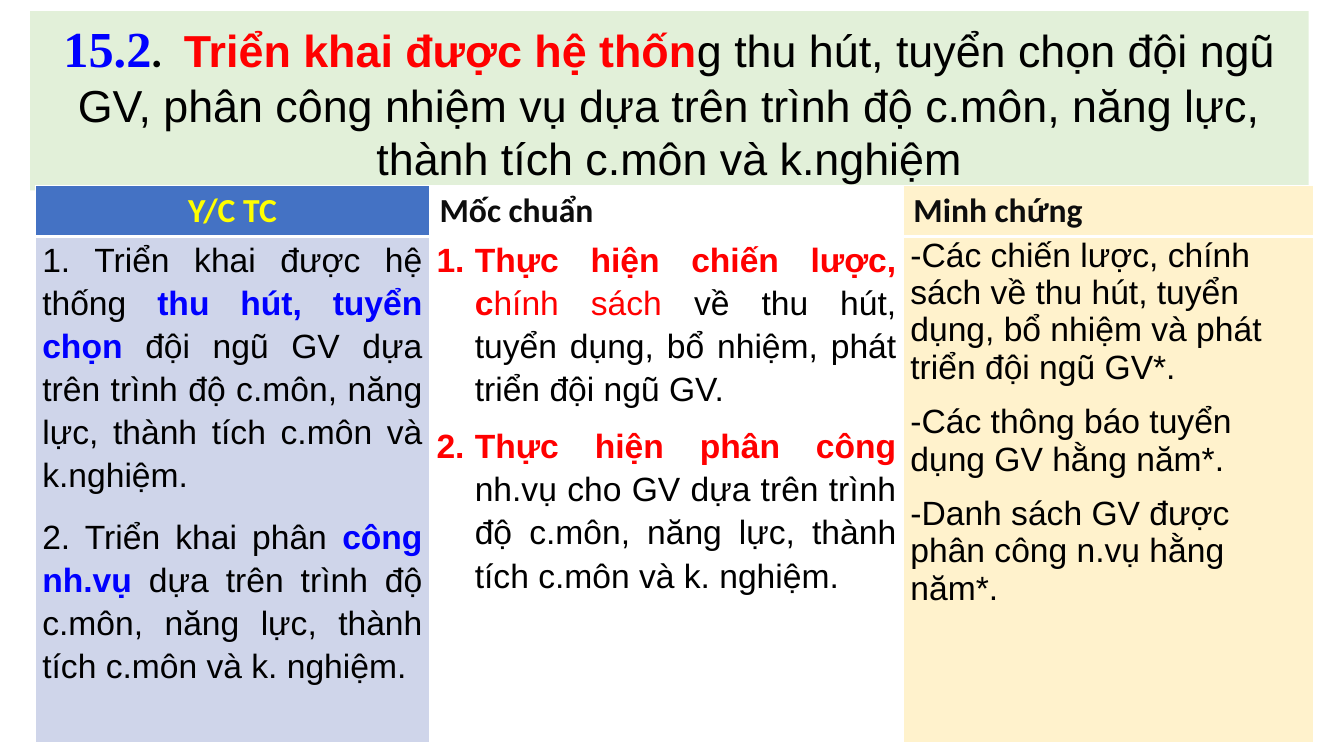
import pptx
import pptx.util
import pptx.dml.color
import pptx.enum.shapes
import pptx.enum.text
import pptx.oxml
import pptx.oxml.ns
from lxml import etree

Inch, Pt = pptx.util.Inches, pptx.util.Pt
RGB = pptx.dml.color.RGBColor
ALIGN = pptx.enum.text.PP_ALIGN

BLACK, INK, WHITE = RGB(0, 0, 0), RGB(0x0D, 0x0D, 0x0D), RGB(255, 255, 255)
RED, BLUE, YELLOW = RGB(255, 0, 0), RGB(0, 0, 255), RGB(255, 255, 0)
MINT, CREAM = RGB(0xE2, 0xF0, 0xD9), RGB(0xFF, 0xF2, 0xCC)
NAVY, PALE = RGB(0x44, 0x72, 0xC4), RGB(0xCF, 0xD5, 0xEA)

# Content: title runs are (text, font, size, colour, bold, italic)
TITLE = [
    ("15.2", "Times New Roman", 36, BLUE, True, False),
    (".  ", "Calibri", 32, BLACK, True, True),
    ("Triển khai được hệ thốn", "Arial", 32, RED, True, False),
    ("g thu hút, tuyển chọn đội ngũ GV, phân công nhiệm vụ dựa trên "
     "trình độ c.môn, năng lực, thành tích c.môn và k.nghiệm",
     "Arial", 32, BLACK, False, False),
]

# Header cells: text, colour, fill, alignment
HEADS = [
    ("Y/C TC", YELLOW, NAVY, ALIGN.CENTER),
    ("Mốc chuẩn", INK, WHITE, ALIGN.LEFT),
    ("Minh chứng", INK, CREAM, ALIGN.LEFT),
]

# Body cells: paragraphs of (text, colour, bold) runs
NEEDS = [
    [("1. Triển khai được hệ thống ", BLACK, False),
     ("thu hút, tuyển chọn ", BLUE, True),
     ("đội ngũ GV dựa trên trình độ c.môn, năng lực, thành tích c.môn "
      "và k.nghiệm.", BLACK, False)],
    [("2. Triển khai phân ", BLACK, False),
     ("công nh.vụ ", BLUE, True),
     ("dựa trên trình độ c.môn, năng lực, thành tích c.môn "
      "và k. nghiệm.", BLACK, False)],
]
MARKS = [
    [("Thực hiện chiến lược, c", RED, True),
     ("hính sách", RED, False),
     (" về thu hút, tuyển dụng, bổ nhiệm, phát triển đội ngũ GV.",
      BLACK, False)],
    [("Thực hiện phân công ", RED, True),
     ("nh.vụ cho GV dựa trên trình độ c.môn, năng lực, thành tích c.môn "
      "và k. nghiệm.", BLACK, False)],
]
PROOFS = [
    [("-Các chiến lược, chính sách về thu hút, tuyển dụng, bổ nhiệm và "
      "phát triển đội ngũ GV*.", BLACK, False)],
    [("-Các thông báo tuyển dụng GV hằng năm*.", BLACK, False)],
    [("-Danh sách GV được phân công n.vụ hằng năm*.", BLACK, False)],
]

# Paragraphs, fill, alignment, line spacing, space before, space after, numbered
BODY = [
    (NEEDS, PALE, ALIGN.JUSTIFY, 1.15, 3, 10, False),
    (MARKS, WHITE, ALIGN.JUSTIFY, 1.15, 0, 10, True),
    (PROOFS, CREAM, ALIGN.LEFT, 1.0, 6, 6, False),
]
COLS, ROWS = [3.91, 4.7, 4.07], [0.48, 5.02]
WIDE = sum(COLS)


def add_run(para, text, face, size, color, bold, slant=False):
    run = para.add_run()
    run.text = text
    font = run.font
    font.name, font.size = face, Pt(size)
    font.bold, font.italic = bold, slant
    font.color.rgb = color


def add_tag(parent, name, **attrs):
    return etree.SubElement(parent, pptx.oxml.ns.qn(name), attrs)


def dress(cell, fill, base):
    """White borders first, then the fill, as the schema orders them."""
    props = cell._tc.get_or_add_tcPr()
    for side, width in (("L", 1), ("R", 1), ("T", 1), ("B", base)):
        line = add_tag(props, "a:ln" + side, w=str(Pt(width)))
        paint = add_tag(line, "a:solidFill")
        add_tag(paint, "a:srgbClr", val=str(WHITE))
    cell.fill.solid()
    cell.fill.fore_color.rgb = fill


def number(para):
    props = para._p.get_or_add_pPr()
    props.set("marL", str(Inch(0.38)))
    props.set("indent", str(-Inch(0.38)))
    add_tag(props, "a:buFont", typeface="+mj-lt")
    add_tag(props, "a:buAutoNum", type="arabicPeriod")


def main():
    deck = pptx.Presentation()
    deck.slide_width, deck.slide_height = Inch(13.33), Inch(7.5)
    slide = deck.slides.add_slide(deck.slide_layouts[6])

    # Title band
    band = slide.shapes.add_shape(
        pptx.enum.shapes.MSO_SHAPE.RECTANGLE,
        Inch(0.3), Inch(0.11), Inch(WIDE), Inch(1.78))
    band.shadow.inherit = False
    band.fill.solid()
    band.fill.fore_color.rgb = MINT
    band.line.fill.background()
    frame = band.text_frame
    frame.word_wrap = True
    frame.vertical_anchor = pptx.enum.text.MSO_ANCHOR.MIDDLE
    para = frame.paragraphs[0]
    para.alignment = ALIGN.CENTER
    for run in TITLE:
        add_run(para, *run)

    # Table grid
    table = slide.shapes.add_table(
        len(ROWS), len(COLS), Inch(0.35), Inch(1.84),
        Inch(WIDE), Inch(sum(ROWS))).table
    for col, width in zip(table.columns, COLS):
        col.width = Inch(width)
    for row, height in zip(table.rows, ROWS):
        row.height = Inch(height)

    # Header row
    for col, (text, color, fill, align) in enumerate(HEADS):
        cell = table.cell(0, col)
        dress(cell, fill, 3)
        para = cell.text_frame.paragraphs[0]
        para.alignment = align
        add_run(para, text, "Calibri", 24, color, True)

    # Body row
    for col, (paras, fill, align, pitch, above, below, listed) in enumerate(BODY):
        cell = table.cell(1, col)
        dress(cell, fill, 1)
        cell.margin_left = cell.margin_right = Inch(0.07)
        cell.margin_top = cell.margin_bottom = 0
        frame = cell.text_frame
        for place, runs in enumerate(paras):
            para = frame.add_paragraph() if place else frame.paragraphs[0]
            para.alignment, para.line_spacing = align, pitch
            para.space_before, para.space_after = Pt(above), Pt(below)
            if listed:
                number(para)
            for text, color, bold in runs:
                add_run(para, text, "Arial", 24, color, bold)

    deck.save("out.pptx")


if __name__ == "__main__":
    main()
